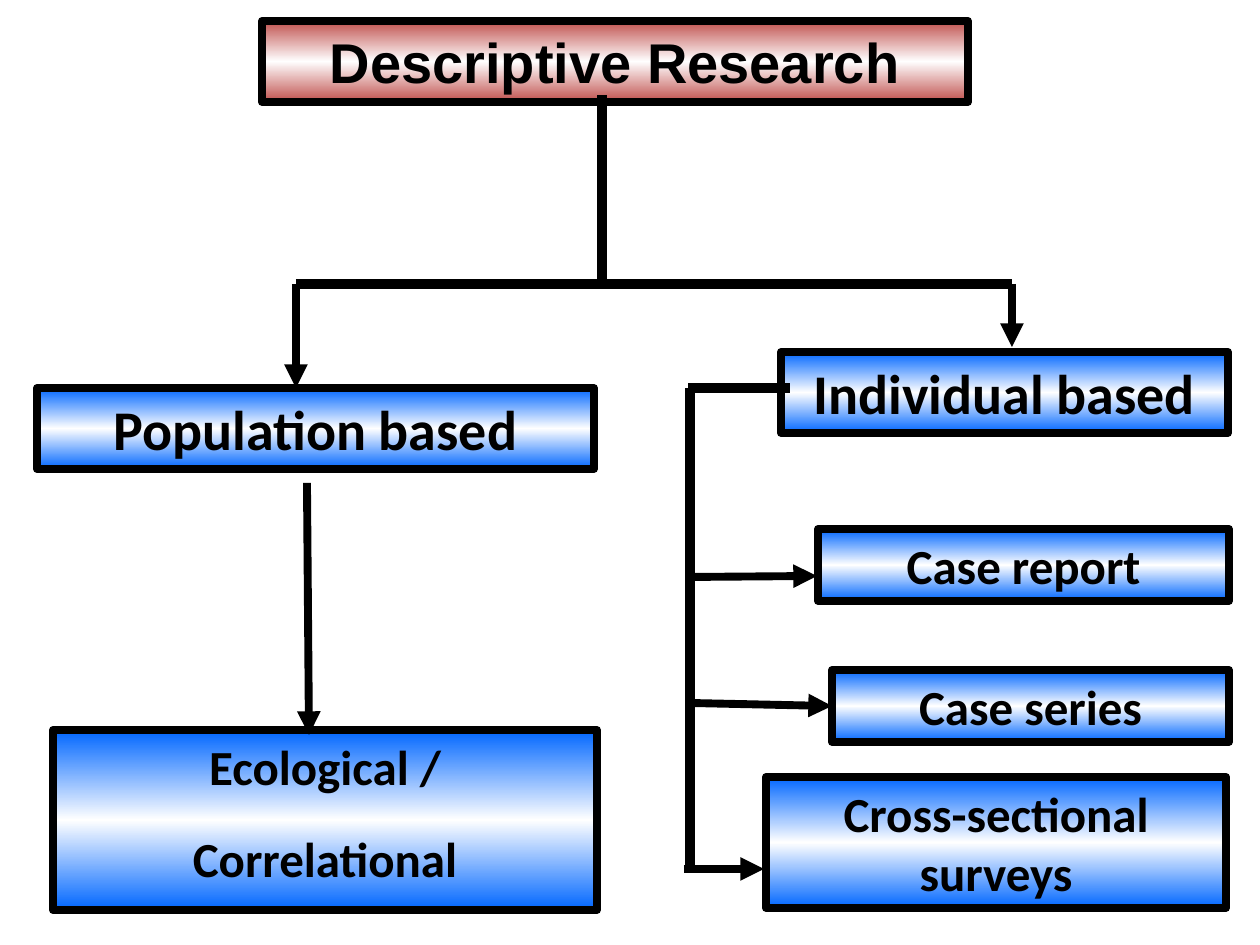
from copy import deepcopy

from lxml import etree
from pptx import Presentation
from pptx.dml.color import RGBColor
from pptx.enum.shapes import MSO_CONNECTOR, MSO_SHAPE
from pptx.enum.text import MSO_ANCHOR, PP_ALIGN
from pptx.oxml.ns import qn
from pptx.util import Emu, Pt

RECTANGLE = MSO_SHAPE.RECTANGLE
STRAIGHT = MSO_CONNECTOR.STRAIGHT
CENTER = PP_ALIGN.CENTER
TOP = MSO_ANCHOR.TOP

PX_PER_INCH = 126
LEFT_SIDE = 1
BLACK, WHITE, RED, BLUE = "000000", "FFFFFF", "C0504D", "0066FF"
THIN, THICK = 4.5, 6

TRUNK_X, LEFT_X, RIGHT_X, SPLIT_Y = 602, 296, 1012, 284
BRANCH_X, BRANCH_Y = 690, 388


def px(value):
    return Emu(round(value * 914400 / PX_PER_INCH))


def color(hex_code):
    return RGBColor.from_string(hex_code)


def set_line(line, width):
    line.color.rgb = color(BLACK)
    line.width = Pt(width)


def fill_band(fill, edge):
    """Shade vertically from the edge colour to white and back."""
    fill.gradient()
    fill.gradient_angle = 90
    stops = fill.gradient_stops
    stop_list = fill._fill._gradFill.gsLst
    stop_list.append(deepcopy(stop_list[0]))
    stops = fill.gradient_stops
    for stop, position, shade in zip(stops, (0, 0.5, 1), (edge, WHITE, edge)):
        stop.position = position
        stop.color.rgb = color(shade)


def add_box(page, frame, lines, size, edge=BLUE, font="Calibri"):
    box = page.shapes.add_shape(RECTANGLE, *map(px, frame))
    box.shadow.inherit = False
    fill_band(box.fill, edge)
    set_line(box.line, THIN)
    text = box.text_frame
    text.word_wrap = True
    text.vertical_anchor = TOP
    for index, line in enumerate(lines):
        para = text.add_paragraph() if index else text.paragraphs[0]
        para.text = line
        para.alignment = CENTER
        if index:
            para.space_before = Pt(19)
        para.font.name = font
        para.font.size = Pt(size)
        para.font.bold = True
        para.font.color.rgb = color(BLACK)
    return box


def add_line(page, start, end, width=THICK):
    line = page.shapes.add_connector(STRAIGHT, *map(px, start + end))
    set_line(line.line, width)
    etree.SubElement(line._element.spPr, qn("a:effectLst"))
    return line


def add_arrow(page, start, end):
    arrow = add_line(page, start, end, THIN)
    etree.SubElement(arrow.line._get_or_add_ln(), qn("a:tailEnd"), type="triangle")
    return arrow


def main():
    deck = Presentation()
    deck.slide_width, deck.slide_height = px(1260), px(945)
    page = deck.slides.add_slide(deck.slide_layouts[6])

    add_box(page, (262, 21, 706, 81), ["Descriptive Research"], 32, RED, "Arial")
    add_box(page, (37, 388, 557, 81), ["Population based"], 32)
    add_box(page, (781, 352, 447, 81), ["Individual based"], 32)
    add_box(page, (818, 529, 411, 72), ["Case report"], 28)
    case_series = add_box(page, (832, 670, 397, 72), ["Case series"], 28)
    add_box(page, (53, 730, 544, 180), ["Ecological /", "Correlational"], 28)
    add_box(page, (766, 777, 460, 131), ["Cross-sectional surveys"], 28)

    add_line(page, (TRUNK_X, 95), (TRUNK_X, SPLIT_Y))
    add_line(page, (LEFT_X, SPLIT_Y), (RIGHT_X, SPLIT_Y))
    add_arrow(page, (LEFT_X, SPLIT_Y), (LEFT_X, 388))
    add_arrow(page, (RIGHT_X, SPLIT_Y), (RIGHT_X, 347))
    add_arrow(page, (307, 483), (309, 735))

    add_line(page, (790, BRANCH_Y), (688, BRANCH_Y))
    add_line(page, (BRANCH_X, BRANCH_Y), (BRANCH_X, 872))
    add_arrow(page, (BRANCH_X, 577), (817, 576))
    series_arrow = add_arrow(page, (BRANCH_X, 703), (832, 706))
    series_arrow.end_connect(case_series, LEFT_SIDE)
    add_arrow(page, (684, 869), (764, 869))

    deck.save("out.pptx")


if __name__ == "__main__":
    main()
